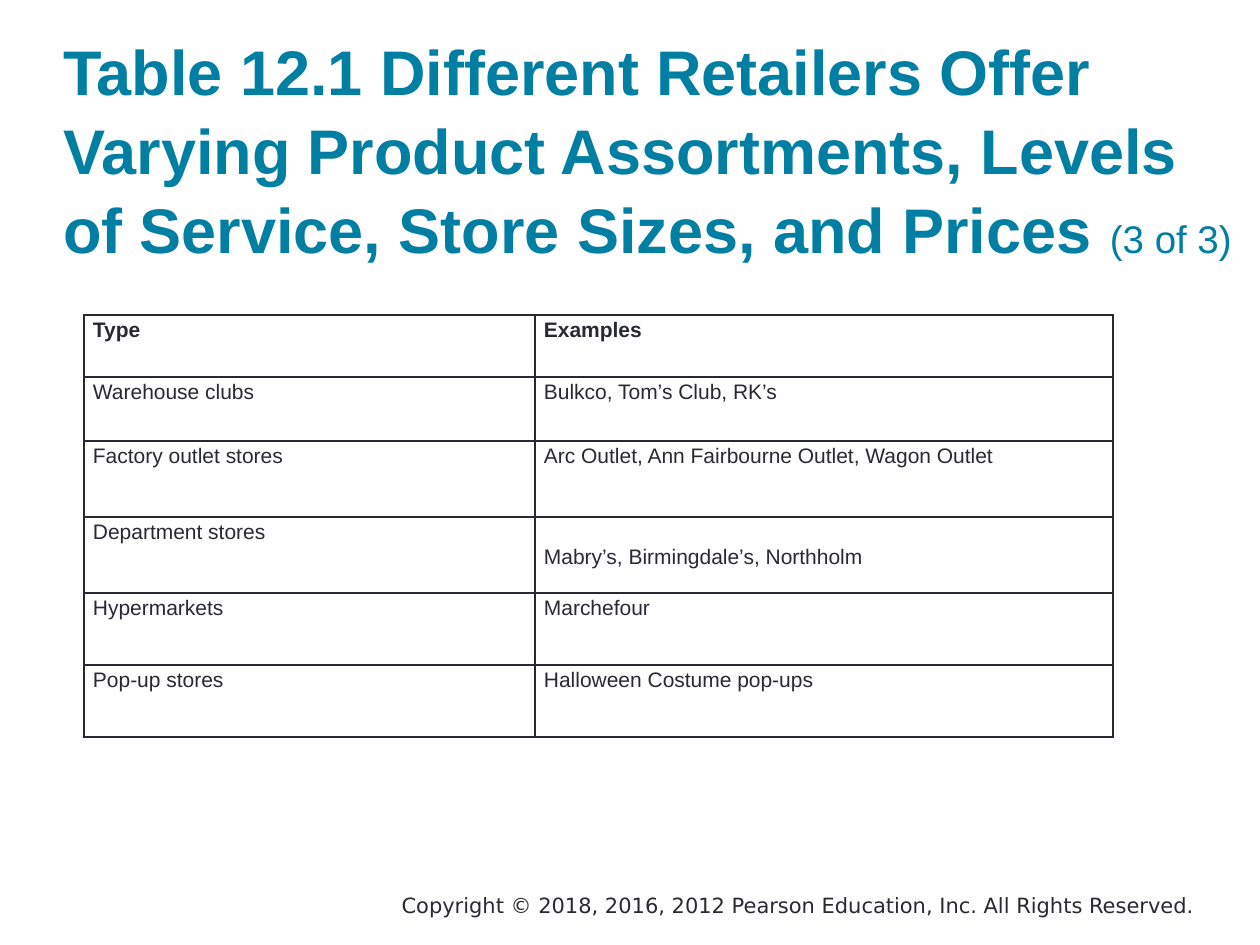
"""Build a slide with a table of retailer types and examples."""
from typing import NamedTuple

from lxml import etree
from pptx import Presentation
from pptx.dml.color import RGBColor
from pptx.enum.text import MSO_ANCHOR, MSO_AUTO_SIZE, PP_ALIGN
from pptx.oxml.ns import qn
from pptx.util import Emu, Pt

TOP, MIDDLE = MSO_ANCHOR.TOP, MSO_ANCHOR.MIDDLE
LEFT, RIGHT = PP_ALIGN.LEFT, PP_ALIGN.RIGHT
NO_AUTOFIT = MSO_AUTO_SIZE.NONE
PX_PER_INCH = 126
COLORS = {"title": "007FA3", "text": "292934", "background": "FFFFFF"}
COLUMN_WIDTHS = (451, 578)
CELL_MARGIN = 9


class Box(NamedTuple):
    left: int
    top: int
    width: int
    height: int


class Row(NamedTuple):
    kind: str
    examples: str
    height: int
    bold: bool = False
    examples_anchor: MSO_ANCHOR = TOP


TITLE_BOX = Box(63, 30, 1176, 212)
TABLE_BOX = Box(84, 315, sum(COLUMN_WIDTHS), 422)
COPYRIGHT_BOX = Box(220, 886, 987, 38)
ROWS = (
    Row("Type", "Examples", 62, bold=True),
    Row("Warehouse clubs", "Bulkco, Tom’s Club, RK’s", 64),
    Row("Factory outlet stores", "Arc Outlet, Ann Fairbourne Outlet, Wagon Outlet", 76),
    Row("Department stores", "Mabry’s, Birmingdale’s, Northholm", 76, examples_anchor=MIDDLE),
    Row("Hypermarkets", "Marchefour", 72),
    Row("Pop-up stores", "Halloween Costume pop-ups", 72),
)


def px(length: int) -> Emu:
    return Emu(round(length * 914400 / PX_PER_INCH))


def set_attributes(target, values: dict) -> None:
    for name, value in values.items():
        setattr(target, name, value)


def place(box: Box) -> list[Emu]:
    return [px(length) for length in box]


def add_run(paragraph, text: str, size: int, color: str, bold: bool = False,
            font_name: str = "Arial") -> None:
    run = paragraph.add_run()
    run.text = text
    set_attributes(run.font, {"name": font_name, "size": Pt(size), "bold": bold})
    run.font.color.rgb = RGBColor.from_string(COLORS[color])


def add_borders(cell) -> None:
    properties = cell._tc.get_or_add_tcPr()
    for index, side in enumerate(("lnL", "lnR", "lnT", "lnB")):
        line = etree.Element(qn(f"a:{side}"), w=str(Pt(1)))
        fill = etree.SubElement(line, qn("a:solidFill"))
        etree.SubElement(fill, qn("a:srgbClr"), val=COLORS["text"])
        properties.insert(index, line)


def fill_cell(cell, text: str, bold: bool, anchor: MSO_ANCHOR) -> None:
    set_attributes(cell, {
        "margin_left": px(CELL_MARGIN), "margin_right": px(CELL_MARGIN),
        "margin_top": 0, "margin_bottom": 0, "vertical_anchor": anchor,
    })
    cell.fill.solid()
    cell.fill.fore_color.rgb = RGBColor.from_string(COLORS["background"])
    add_borders(cell)
    paragraph = cell.text_frame.paragraphs[0]
    paragraph.line_spacing = 1.15
    add_run(paragraph, text, 12, "text", bold)


def add_title(slide) -> None:
    title = slide.shapes.title
    set_attributes(title, dict(zip(Box._fields, place(TITLE_BOX))))
    set_attributes(title.text_frame, {
        "margin_left": 0, "margin_right": 0, "margin_top": 0, "margin_bottom": 0,
        "vertical_anchor": TOP, "word_wrap": True, "auto_size": NO_AUTOFIT,
    })
    paragraph = title.text_frame.paragraphs[0]
    set_attributes(paragraph, {"alignment": LEFT, "line_spacing": 1.04})
    add_run(paragraph, "Table 12.1 Different Retailers Offer Varying Product Assortments, "
            "Levels of Service, Store Sizes, and Prices ", 36, "title", bold=True)
    add_run(paragraph, "(3 of 3)", 22, "title")


def add_retailer_table(slide) -> None:
    table = slide.shapes.add_table(len(ROWS), len(COLUMN_WIDTHS), *place(TABLE_BOX)).table
    set_attributes(table, {"first_row": False, "horz_banding": False})
    for column, width in zip(table.columns, COLUMN_WIDTHS):
        column.width = px(width)
    for table_row, row in zip(table.rows, ROWS):
        table_row.height = px(row.height)
        kind_cell, examples_cell = table_row.cells
        fill_cell(kind_cell, row.kind, row.bold, TOP)
        fill_cell(examples_cell, row.examples, row.bold, row.examples_anchor)


def add_copyright(slide) -> None:
    text_frame = slide.shapes.add_textbox(*place(COPYRIGHT_BOX)).text_frame
    text_frame.word_wrap = True
    paragraph = text_frame.paragraphs[0]
    paragraph.alignment = RIGHT
    add_run(paragraph, "Copyright © 2018, 2016, 2012 Pearson Education, Inc. All Rights Reserved.",
            12, "text", font_name="DejaVu Sans")


def main() -> None:
    presentation = Presentation()
    set_attributes(presentation, {"slide_width": px(1260), "slide_height": px(945)})
    slide = presentation.slides.add_slide(presentation.slide_layouts[5])
    add_copyright(slide)
    add_title(slide)
    add_retailer_table(slide)
    presentation.save("out.pptx")


if __name__ == "__main__":
    main()
